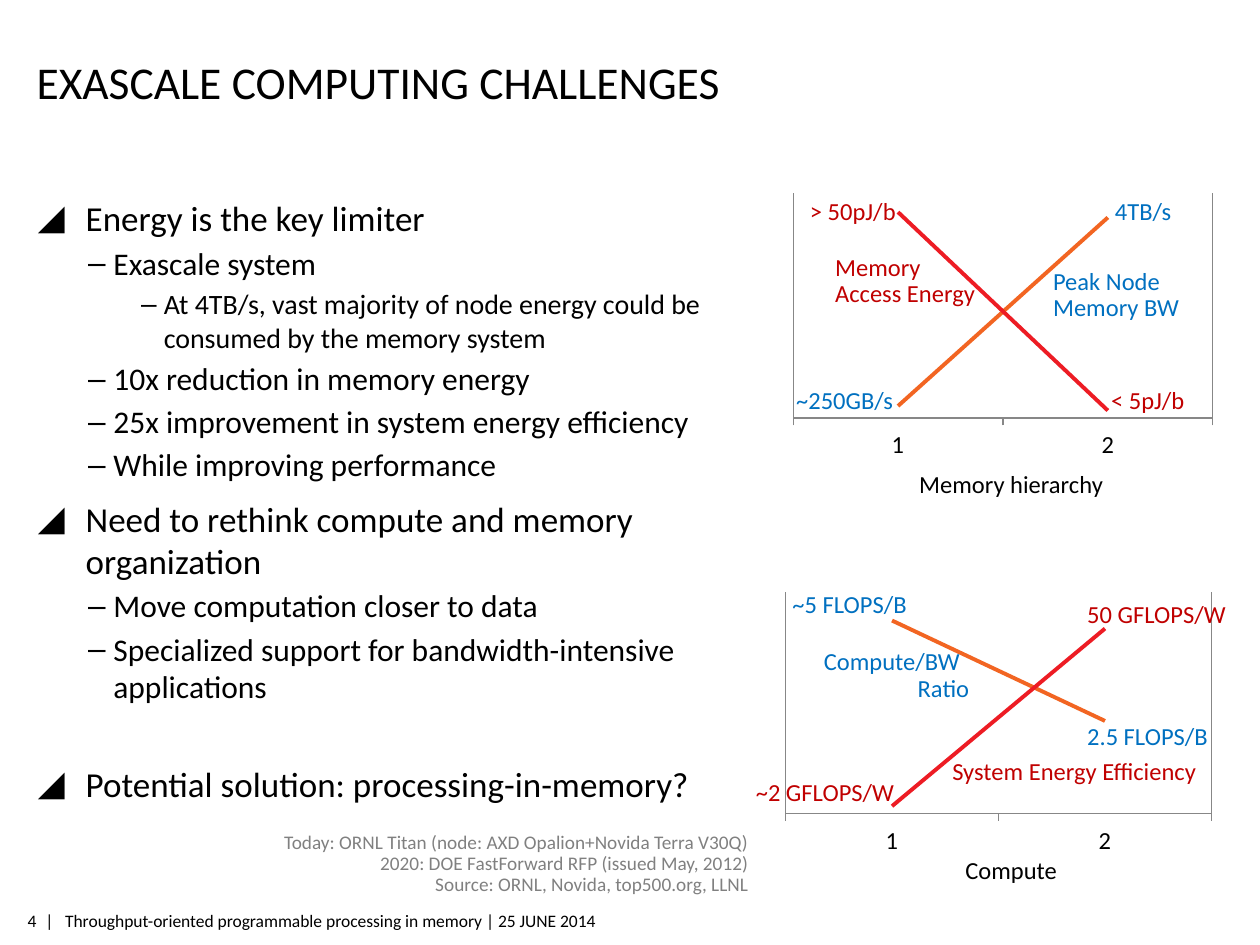
"""Build the exascale computing challenges slide."""
from copy import deepcopy

from lxml import etree
from pptx import Presentation
from pptx.chart.data import CategoryChartData
from pptx.dml.color import RGBColor
from pptx.enum.chart import XL_CHART_TYPE, XL_TICK_LABEL_POSITION, XL_TICK_MARK
from pptx.enum.text import MSO_ANCHOR, MSO_AUTO_SIZE, PP_ALIGN
from pptx.oxml.ns import qn
from pptx.util import Inches, Pt

LEFT, CENTER, RIGHT = PP_ALIGN.LEFT, PP_ALIGN.CENTER, PP_ALIGN.RIGHT
TOP, MIDDLE, BOTTOM = MSO_ANCHOR.TOP, MSO_ANCHOR.MIDDLE, MSO_ANCHOR.BOTTOM
NO_AUTO_SIZE, LINE_CHART = MSO_AUTO_SIZE.NONE, XL_CHART_TYPE.LINE
NO_TICK, TICK_OUT = XL_TICK_MARK.NONE, XL_TICK_MARK.OUTSIDE
NO_LABELS = XL_TICK_LABEL_POSITION.NONE
FONT = "Calibri"
COLORS = {
    "black": "000000", "gray": "808080", "axis": "878787", "blue": "0070C0",
    "red": "C00000", "orange_line": "F26522", "red_line": "ED1C24",
}
# level: (margin, hanging indent, bullet, size, space before)
LEVELS = [
    (0.38, 0.38, "◢", 20, 8),
    (0.6, 0.2, "‒", 18, 3),
    (1.0, 0.18, "‒", 16, 3),
]
BULLETS = [
    (0, "Energy is the key limiter"),
    (1, "Exascale system"),
    (2, "At 4TB/s, vast majority of node energy could be consumed by the memory system"),
    (1, "10x reduction in memory energy"),
    (1, "25x improvement in system energy efficiency"),
    (1, "While improving performance"),
    (0, "Need to rethink compute and memory organization"),
    (1, "Move computation closer to data"),
    (1, "Specialized support for bandwidth-intensive applications"),
    (0, "Potential solution: processing-in-memory?"),
]
LAST_GAP = 33
SOURCES = [
    "Today: ORNL Titan (node: AXD Opalion+Novida Terra V30Q)",
    "2020: DOE FastForward RFP (issued May, 2012)",
    "Source: ORNL, Novida, top500.org, LLNL",
]
# box, plot height share, left values, left maximum, right values, right maximum
CHARTS = [
    ((6.29, 1.53, 3.34, 2.17), 0.824, (6, 100), 112, (55, 2), 60),
    ((6.23, 4.69, 3.39, 2.16), 0.818, (100, 48), 115, (2, 50), 60),
]
LABELS = [
    ("Peak Node Memory BW", "blue", (8.26, 2.08, 1.64, 0.53)),
    ("4TB/s", "blue", (8.75, 1.53, 0.65, 0.31)),
    ("~250GB/s", "blue", (6.22, 3.03, 0.98, 0.31)),
    ("Memory Access Energy", "red", (6.53, 1.97, 1.42, 0.53)),
    ("> 50pJ/b", "red", (6.33, 1.53, 0.89, 0.31)),
    ("< 5pJ/b", "red", (8.72, 3.03, 0.79, 0.31)),
    ("~5 FLOPS/B", "blue", (6.19, 4.65, 1.11, 0.31)),
    ("System Energy Efficiency", "red", (7.46, 5.98, 2.16, 0.31)),
    ("50 GFLOPS/W", "red", (8.53, 4.73, 1.31, 0.31)),
    ("~2 GFLOPS/W", "red", (5.9, 6.14, 1.31, 0.31)),
    ("2.5 FLOPS/B", "blue", (8.53, 5.7, 1.21, 0.31)),
]
AXIS_TITLES = [("Memory hierarchy", 3.7), ("Compute", 6.76)]


def rgb(name):
    """Return the named colour."""
    return RGBColor.from_string(COLORS[name])


def style(font, size, color="black"):
    """Set the face, size and colour of a font."""
    font.name, font.size = FONT, Pt(size)
    font.color.rgb = rgb(color)


def place(sp, box):
    """Move and size a shape in inches."""
    sp.left, sp.top, sp.width, sp.height = map(Inches, box)


def set_frame(tf, insets, anchor, wrap=True):
    """Set margins, anchor and wrapping of a text frame."""
    tf.margin_left, tf.margin_top, tf.margin_right, tf.margin_bottom = map(Inches, insets)
    tf.vertical_anchor, tf.word_wrap = anchor, wrap
    tf.auto_size = NO_AUTO_SIZE


def add_text(slide, lines, box, size, color="black", aligns=(LEFT,), wrap=False,
             side=0.1, spacing=0.9):
    """Add a text box with one paragraph per line."""
    tf = slide.shapes.add_textbox(*map(Inches, box)).text_frame
    set_frame(tf, (side, 0.05, side, 0.05), MIDDLE, wrap)
    tf.text = "\n".join(lines)
    for i, p in enumerate(tf.paragraphs):
        p.alignment, p.line_spacing = aligns[i % len(aligns)], spacing
        style(p.runs[0].font, size, color)


def add_title(slide, text):
    """Fill and format the title placeholder."""
    sp = slide.shapes.title
    place(sp, (0.29, 0.34, 8.4, 0.52))
    tf = sp.text_frame
    set_frame(tf, (0, 0.05, 0, 0), BOTTOM)
    tf.text = text
    p = tf.paragraphs[0]
    p.alignment = LEFT
    style(p.runs[0].font, 26)


def add_bullets(slide):
    """Fill the body placeholder with the bulleted list."""
    sp = slide.placeholders[1]
    place(sp, (0.3, 1.51, 5.61, 5.4))
    tf = sp.text_frame
    set_frame(tf, (0, 0.05, 0, 0.05), TOP)
    tf.text = "\n".join(text for _, text in BULLETS)
    for p, (level, _) in zip(tf.paragraphs, BULLETS):
        margin, hang, mark, size, before = LEVELS[level]
        p.level = level
        pPr = p._p.get_or_add_pPr()
        pPr.set("marL", str(Inches(margin)))
        pPr.set("indent", str(-Inches(hang)))
        clr = etree.SubElement(pPr, qn("a:buClr"))
        etree.SubElement(clr, qn("a:srgbClr"), val=COLORS["black"])
        etree.SubElement(pPr, qn("a:buChar"), char=mark)
        p.space_before = Pt(before)
        style(p.runs[0].font, size)
    tf.paragraphs[0].space_before = Pt(0)
    tf.paragraphs[-1].space_before = Pt(LAST_GAP)


def set_layout(plot_area, height):
    """Fix the inner plot area to the full width and a share of the height."""
    for old in plot_area.findall(qn("c:layout")):
        plot_area.remove(old)
    layout = etree.Element(qn("c:layout"))
    manual = etree.SubElement(layout, qn("c:manualLayout"))
    values = {"layoutTarget": "inner", "xMode": "edge", "yMode": "edge",
              "x": 0, "y": 0, "w": 1, "h": height}
    for tag, val in values.items():
        etree.SubElement(manual, qn("c:" + tag), val=str(val))
    plot_area.insert(0, layout)


def add_right_axis(plot_area, maximum):
    """Move the second series to its own value axis on the right."""
    line = plot_area.find(qn("c:lineChart"))
    cat, val = plot_area.find(qn("c:catAx")), plot_area.find(qn("c:valAx"))
    line2, cat2, val2 = deepcopy(line), deepcopy(cat), deepcopy(val)
    line.remove(line.findall(qn("c:ser"))[1])
    line2.remove(line2.find(qn("c:ser")))
    line.addnext(line2)
    val.addnext(val2)
    val2.addnext(cat2)
    ids = {cat.find(qn("c:axId")).get("val"): "1001",
           val.find(qn("c:axId")).get("val"): "1002"}
    for part in (line2, cat2, val2):
        for tag in ("c:axId", "c:crossAx"):
            for el in part.findall(qn(tag)):
                el.set("val", ids[el.get("val")])
    cat2.find(qn("c:delete")).set("val", "1")
    val2.find(qn("c:axPos")).set("val", "r")
    val2.find(qn("c:crosses")).set("val", "max")
    val2.find(qn("c:scaling")).find(qn("c:max")).set("val", str(maximum))


def add_line_chart(slide, box, height, left, left_max, right, right_max):
    """Add a two-line chart with left and right value axes."""
    data = CategoryChartData()
    data.categories = ["1", "2"]
    data.add_series("Series 1", left)
    data.add_series("Series 2", right)
    chart = slide.shapes.add_chart(LINE_CHART, *map(Inches, box), data).chart
    chart.has_legend = chart.has_title = False
    style(chart.font, 10)
    chart.plots[0].vary_by_categories = False
    for series, color in zip(chart.plots[0].series, ("orange_line", "red_line")):
        series.smooth = False
        series.format.line.width = Pt(2.25)
        series.format.line.color.rgb = rgb(color)
    cat, val = chart.category_axis, chart.value_axis
    for axis in (cat, val):
        axis.has_major_gridlines = False
        axis.format.line.color.rgb = rgb("axis")
        axis.format.line.width = Pt(0.75)
    cat.major_tick_mark = TICK_OUT
    style(cat.tick_labels.font, 14)
    val.minimum_scale, val.maximum_scale = 0, left_max
    val.major_tick_mark, val.tick_label_position = NO_TICK, NO_LABELS
    plot_area = chart._chartSpace.chart.plotArea
    set_layout(plot_area, height)
    add_right_axis(plot_area, right_max)


def main():
    """Build and save the slide."""
    prs = Presentation()
    prs.slide_width, prs.slide_height = Inches(10), Inches(7.5)
    slide = prs.slides.add_slide(prs.slide_layouts[1])
    footer = "|   Throughput-oriented programmable processing in memory | 25 JUNE 2014"
    add_text(slide, [footer], (0.36, 7.18, 4.6, 0.26), 10, side=0, spacing=1)
    add_text(slide, ["4"], (0.13, 7.18, 0.16, 0.26), 10, aligns=(RIGHT,), side=0, spacing=1)
    add_title(slide, "EXASCALE COMPUTING CHALLENGES")
    add_bullets(slide)
    add_text(slide, SOURCES, (2.02, 6.56, 4.02, 0.6), 11, "gray", (RIGHT,))
    for chart_row in CHARTS:
        add_line_chart(slide, *chart_row)
    for text, color, box in LABELS:
        add_text(slide, [text], box, 14, color, wrap=box[3] > 0.5)
    add_text(slide, ["Compute/BW", "Ratio"], (6.44, 5.1, 1.35, 0.53), 14, "blue", (LEFT, RIGHT))
    for text, top in AXIS_TITLES:
        add_text(slide, [text], (6.75, top, 2.55, 0.31), 14, aligns=(CENTER,), wrap=True)
    prs.save("out.pptx")


if __name__ == "__main__":
    main()
